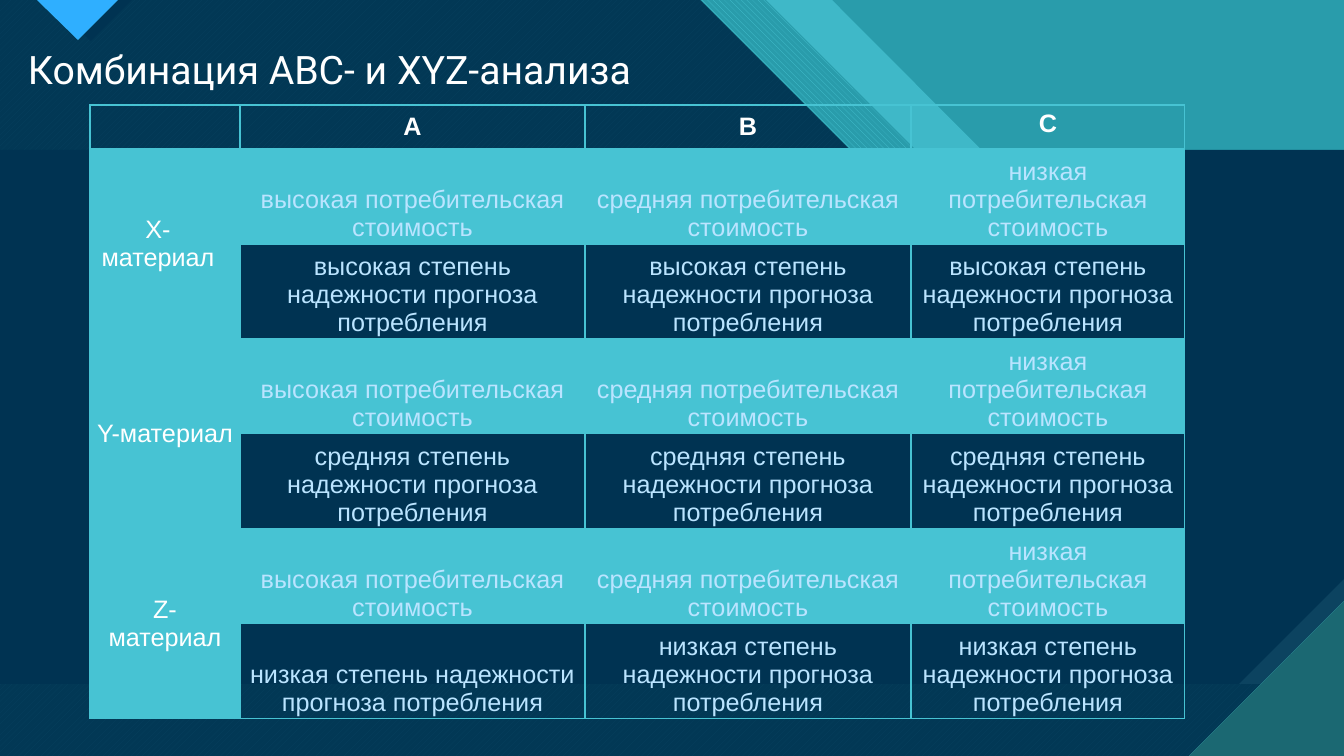
import dataclasses
from typing import Optional

import pptx
import pptx.dml.color
import pptx.enum.dml
import pptx.enum.text
import pptx.oxml
import pptx.oxml.ns
import pptx.util

PX = 9144000 / 1008  # EMU in one px
COLORS = {
    "navy": "003352",
    "slate": "0C4360",
    "pine": "1B6872",
    "teal": "299CAB",
    "aqua": "47C3D3",
    "azure": "2FAFFF",
    "ice": "BAE4FF",
    "white": "FFFFFF",
}
PATTERN = pptx.enum.dml.MSO_PATTERN
ANCHOR = pptx.enum.text.MSO_ANCHOR


@dataclasses.dataclass(frozen=True)
class Panel:
    points: tuple[tuple[int, int], ...]
    color: str
    opacity: int = 100
    pattern: Optional[PATTERN] = None
    back: str = "pine"


@dataclasses.dataclass(frozen=True)
class CellStyle:
    anchor: ANCHOR
    margin_x: int
    margin_y: int
    color: str = "white"
    bold: bool = False
    tinted: bool = False


PANELS = [
    Panel(((0, 0), (832, 0), (1131, 300), (1244, 300), (1344, 400), (1344, 756), (0, 756)),
          "aqua", 74),
    Panel(((66, 0), (766, 0), (1066, 300), (1193, 300), (1344, 451), (1344, 756), (66, 756)),
          "aqua", pattern=PATTERN.WIDE_DOWNWARD_DIAGONAL, back="teal"),
]
DARK_FIELD = ((0, 0), (700, 0), (1000, 300), (1127, 300), (1344, 517), (1344, 756), (0, 756))
PANELS += [
    Panel(DARK_FIELD, "aqua", pattern=PATTERN.WIDE_UPWARD_DIAGONAL),
    Panel(DARK_FIELD, "navy", 90),
    Panel(((49, 0), (132, 0), (91, 41)), "navy"),
    Panel(((37, 0), (118, 0), (78, 40)), "azure", pattern=PATTERN.DARK_HORIZONTAL),
    Panel(((0, 150), (1344, 150), (1344, 684), (0, 684)), "slate", pattern=PATTERN.DARK_VERTICAL),
    Panel(((0, 150), (1344, 150), (1344, 579), (1239, 684), (0, 684)), "navy"),
    Panel(((1189, 756), (1344, 756), (1344, 601)), "pine",
          pattern=PATTERN.DARK_HORIZONTAL, back="aqua"),
]

COLUMN_WIDTHS = [150, 345, 326, 274]
HEADER_HEIGHT, ROW_HEIGHT = 44, 95
HEADERS = ["А", "B", "С"]
VALUES = ["высокая", "средняя", "низкая"]
RELIABILITY = {"X": "высокая", "Y": "средняя", "Z": "низкая"}

HEADER = CellStyle(ANCHOR.MIDDLE, 7, 7, bold=True)
LAST_HEADER = CellStyle(ANCHOR.TOP, 10, 5, bold=True)
MATERIAL = CellStyle(ANCHOR.MIDDLE, 7, 7, tinted=True)
VALUE = CellStyle(ANCHOR.BOTTOM, 2, 2, "ice", tinted=True)
FORECAST = CellStyle(ANCHOR.BOTTOM, 2, 2, "ice")


def px(length: int) -> pptx.util.Emu:
    return pptx.util.Emu(round(length * PX))


def rgb(color: str) -> pptx.dml.color.RGBColor:
    return pptx.dml.color.RGBColor.from_string(COLORS[color])


def fill_solid(fill, color: str, opacity: int = 100) -> None:
    fill.solid()
    fill.fore_color.rgb = rgb(color)
    if opacity < 100:
        srgb = fill._xPr.find(".//" + pptx.oxml.ns.qn("a:srgbClr"))
        srgb.append(pptx.oxml.parse_xml(
            f'<a:alpha {pptx.oxml.ns.nsdecls("a")} val="{opacity * 1000}"/>'))


def draw_panel(slide, panel: Panel) -> None:
    start, *others = panel.points
    builder = slide.shapes.build_freeform(*start, scale=PX)
    builder.add_line_segments(others, close=True)
    shape = builder.convert_to_shape()
    shape.shadow.inherit = False
    shape.line.fill.background()
    if panel.pattern is None:
        fill_solid(shape.fill, panel.color, panel.opacity)
    else:
        shape.fill.patterned()
        shape.fill.pattern = panel.pattern
        shape.fill.fore_color.rgb = rgb(panel.color)
        shape.fill.back_color.rgb = rgb(panel.back)


def add_borders(cell, widths: dict[str, int]) -> None:
    """Draw the sides L, R, T and B in points."""
    properties = cell._tc.get_or_add_tcPr()
    for side, width in widths.items():
        properties.append(pptx.oxml.parse_xml(
            f'<a:ln{side} {pptx.oxml.ns.nsdecls("a")} w="{pptx.util.Pt(width)}">'
            f'<a:solidFill><a:srgbClr val="{COLORS["aqua"]}"/></a:solidFill></a:ln{side}>'))


def format_run(run, font: str, size: int, color: str, bold: bool = False) -> None:
    run.font.name = font
    run.font.size = pptx.util.Pt(size)
    run.font.bold = bold
    run.font.color.rgb = rgb(color)


def write_cell(cell, text: str, style: CellStyle) -> None:
    cell.vertical_anchor = style.anchor
    cell.margin_left = cell.margin_right = px(style.margin_x)
    cell.margin_top = cell.margin_bottom = px(style.margin_y)
    if style.tinted:
        fill_solid(cell.fill, "aqua", 20)
    paragraph = cell.text_frame.paragraphs[0]
    paragraph.text = text
    paragraph.alignment = pptx.enum.text.PP_ALIGN.CENTER
    format_run(paragraph.runs[0], "Arial", 18, style.color, style.bold)


def draw_matrix(slide) -> None:
    row_heights = [HEADER_HEIGHT] + [ROW_HEIGHT] * (2 * len(RELIABILITY))
    matrix = slide.shapes.add_table(
        len(row_heights), len(COLUMN_WIDTHS), px(90), px(105),
        px(sum(COLUMN_WIDTHS)), px(sum(row_heights))).table
    matrix.first_row = matrix.horz_banding = False
    for column, width in zip(matrix.columns, COLUMN_WIDTHS):
        column.width = px(width)
    for index, (row, height) in enumerate(zip(matrix.rows, row_heights)):
        row.height = px(height)
        for cell in row.cells:
            add_borders(cell, {"L": 1, "R": 1, "T": 2 if index == 1 else 1,
                               "B": 2 if index == 0 else 1})
            cell.fill.background()

    for column, title in enumerate(HEADERS, start=1):
        style = LAST_HEADER if column == len(HEADERS) else HEADER
        write_cell(matrix.cell(0, column), title, style)
    for group, (letter, reliability) in enumerate(RELIABILITY.items()):
        top = 1 + 2 * group
        material = matrix.cell(top, 0)
        material.merge(matrix.cell(top + 1, 0))
        write_cell(material, f"{letter}-материал", MATERIAL)
        for column, value in enumerate(VALUES, start=1):
            write_cell(matrix.cell(top, column), f"{value} потребительская стоимость", VALUE)
            write_cell(matrix.cell(top + 1, column),
                       f"{reliability} степень надежности прогноза потребления", FORECAST)
    matrix.cell(1, 0).margin_right = px(21)


def draw_title(slide) -> None:
    title = slide.shapes.add_textbox(px(18), px(40), px(707), px(57)).text_frame
    title.word_wrap = True
    title.text = "Комбинация АВС- и XYZ-анализа"
    format_run(title.paragraphs[0].runs[0], "Roboto", 28, "white")


def main() -> None:
    presentation = pptx.Presentation()
    presentation.slide_width, presentation.slide_height = px(1344), px(756)
    slide = presentation.slides.add_slide(presentation.slide_layouts[6])
    fill_solid(slide.background.fill, "teal")
    for panel in PANELS:
        draw_panel(slide, panel)
    draw_matrix(slide)
    draw_title(slide)
    presentation.save("out.pptx")


if __name__ == "__main__":
    main()
